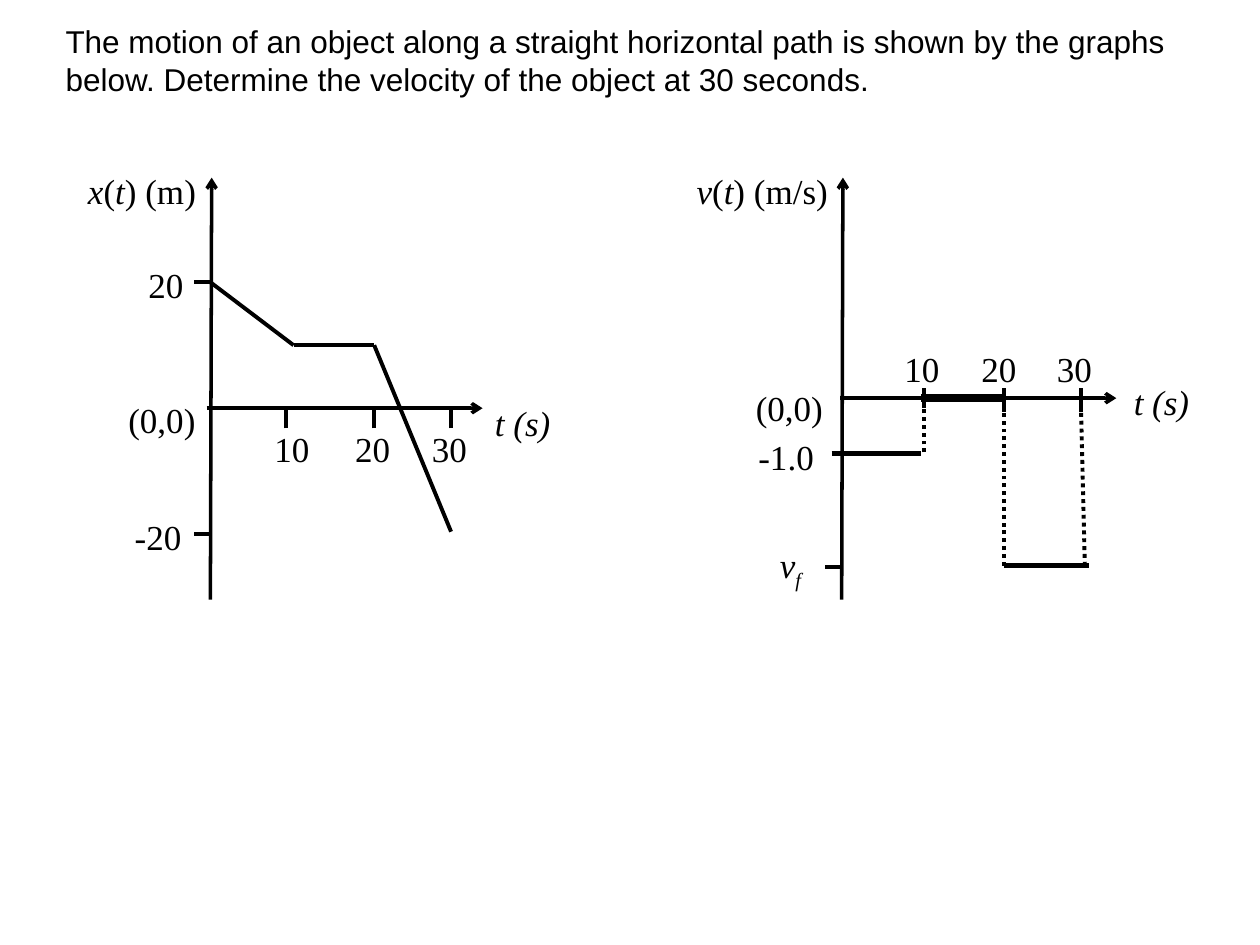
from itertools import pairwise

from lxml.etree import SubElement
from pptx import Presentation
from pptx.dml.color import RGBColor
from pptx.enum.dml import MSO_LINE_DASH_STYLE as Dash
from pptx.enum.shapes import MSO_CONNECTOR as Connector
from pptx.enum.text import MSO_ANCHOR as Anchor, PP_ALIGN as Align
from pptx.oxml.ns import qn
from pptx.util import Inches, Pt

COLORS = {"ink": "000000", "paper": "FFFFFF"}
INK = RGBColor.from_string(COLORS["ink"])
QUESTION = ("The motion of an object along a straight horizontal path is shown by the graphs below. "
            "Determine the velocity of the object at 30 seconds.")

# Runs marked "i" are italic, "sub" italic subscript
TIME = [("t (s)", "i")]
ORIGIN = [("(0,0)", "")]

# Offsets in inches from each graph's origin; y grows downwards
GRAPHS = [
    {   # position against time
        "origin": (1.67, 3.24),
        "axis_start": -0.03,
        "ticks": [("10", 0.60, 0.41), ("20", 1.30, 1.05), ("30", 1.91, 1.66)],
        "tick_span": [(0, 0.16)] * 3,
        "tick_label_top": 0.05,
        "value_ticks": [-1.0, 1.0],
        "curves": [([(0, -1.0), (0.66, -0.5), (1.30, -0.5), (1.91, 0.98)], 2.25)],
        "drops": [],
        "labels": [
            ([("x", "i"), ("(", ""), ("t", "i"), (") (m)", "")], -1.07, -1.99, 1.10),
            (TIME, 2.16, -0.15, 0.90),
            (ORIGIN, -0.75, -0.18, 0.83),
            ([("20", "")], -0.59, -1.25, 0.58),
            ([("-20", "")], -0.70, 0.75, 0.78),
        ],
    },
    {   # velocity against time
        "origin": (6.68, 3.16),
        "axis_start": -0.01,
        "ticks": [("10", 0.65, 0.40), ("20", 1.29, 1.01), ("30", 1.90, 1.61)],
        "tick_span": [(-0.08, 0.08), (-0.08, 0.11), (-0.08, 0.11)],
        "tick_label_top": -0.50,
        "value_ticks": [1.34],
        "curves": [
            ([(-0.08, 0.44), (0.63, 0.44)], 3),
            ([(0.63, 0), (1.29, 0)], 4.5),
            ([(1.29, 1.33), (1.96, 1.33)], 3),
        ],
        "drops": [
            ((0.65, 0.43), (0.65, 0.08)),
            ((1.29, 1.33), (1.29, 0.10)),
            ((1.93, 1.33), (1.90, 0.10)),
        ],
        "labels": [
            ([("v", "i"), ("(", ""), ("t", "i"), (") (m/s)", "")], -1.25, -1.91, 1.40),
            (TIME, 2.22, -0.24, 0.90),
            (ORIGIN, -0.78, -0.19, 0.86),
            ([("-1.0", "")], -0.76, 0.20, 0.69),
            ([("v", "i"), ("f", "sub")], -0.59, 1.05, 0.52),
        ],
    },
]
AXIS_TOP, AXIS_BOTTOM, AXIS_LENGTH = 1.41, 4.76, 2.19
TICK, LABEL_HEIGHT, TICK_LABEL_WIDTH = 0.13, 0.60, 0.64


def add_line(slide, start, end, width=2.25, dotted=False, arrow=False):
    line = slide.shapes.add_connector(Connector.STRAIGHT, *map(Inches, (*start, *end)))
    line.line.color.rgb = INK
    line.line.width = Pt(width)
    if dotted:
        line.line.dash_style = Dash.ROUND_DOT
    if arrow:
        SubElement(line.line._get_or_add_ln(), qn("a:tailEnd"), type="arrow")
    SubElement(line._element.spPr, qn("a:effectLst"))


def add_label(slide, runs, left, top, width):
    frame = slide.shapes.add_textbox(*map(Inches, (left, top, width, LABEL_HEIGHT))).text_frame
    frame.word_wrap = True
    label = frame.paragraphs[0]
    label.line_spacing = 1.15
    label.space_after = Pt(10)
    label.font.size = Pt(20)
    label.font.name = "Times New Roman"
    label.font.color.rgb = INK
    for text, style in runs:
        run = label.add_run()
        run.text = text
        run.font.italic = style != ""
        if style == "sub":
            run.font._element.set("baseline", "-25000")


def add_graph(slide, graph):
    left, top = graph["origin"]

    def at(x, y):
        return left + x, top + y

    # Axes
    add_line(slide, (left, AXIS_BOTTOM), (left + 0.01, AXIS_TOP), 2, arrow=True)
    start = graph["axis_start"]
    add_line(slide, at(start, 0), at(start + AXIS_LENGTH, 0), 2, arrow=True)

    # Ticks and time labels
    for (text, x, label_x), (upper, lower) in zip(graph["ticks"], graph["tick_span"]):
        add_line(slide, at(x, lower), at(x, upper))
        add_label(slide, [(text, "")], *at(label_x, graph["tick_label_top"]), TICK_LABEL_WIDTH)
    for y in graph["value_ticks"]:
        add_line(slide, at(-TICK, y), at(0, y))

    # Plotted motion
    for points, width in graph["curves"]:
        for first, second in pairwise(points):
            add_line(slide, at(*first), at(*second), width)
    for first, second in graph["drops"]:
        add_line(slide, at(*first), at(*second), dotted=True)

    for runs, x, y, width in graph["labels"]:
        add_label(slide, runs, *at(x, y), width)


def main():
    deck = Presentation()
    deck.slide_width, deck.slide_height = Inches(10), Inches(7.5)
    slide = deck.slides.add_slide(deck.slide_layouts[5])
    slide.background.fill.solid()
    slide.background.fill.fore_color.rgb = RGBColor.from_string(COLORS["paper"])

    # Question
    title = slide.shapes.title
    title.left, title.top, title.width, title.height = map(Inches, (0.42, 0.12, 9.08, 0.71))
    title.text_frame.text = QUESTION
    title.text_frame.vertical_anchor = Anchor.MIDDLE
    question = title.text_frame.paragraphs[0]
    question.alignment = Align.LEFT
    question.font.size = Pt(18)
    question.font.name = "Arial"
    question.font.color.rgb = INK

    for graph in GRAPHS:
        add_graph(slide, graph)
    deck.save("out.pptx")


if __name__ == "__main__":
    main()
